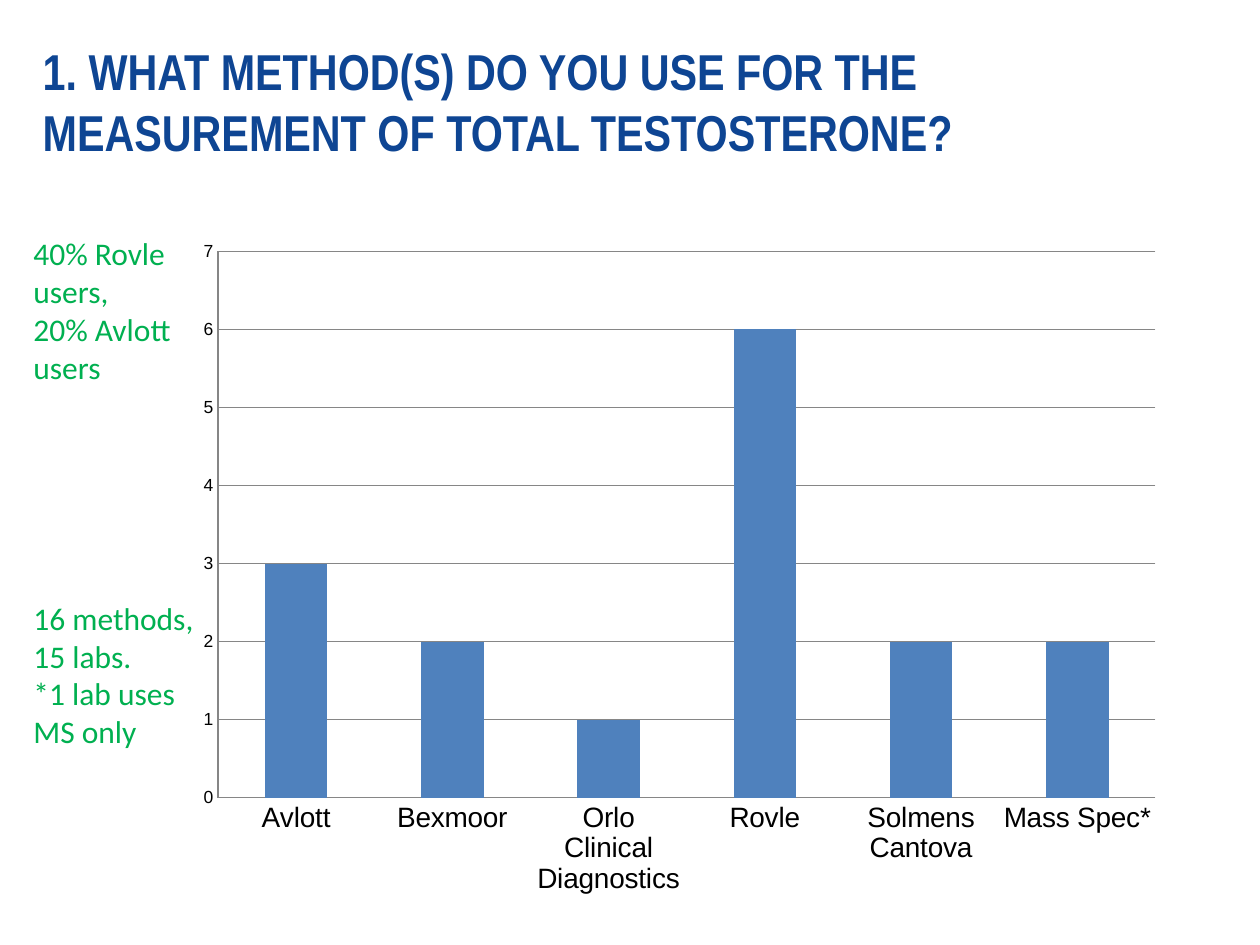
from dataclasses import dataclass

from pptx import Presentation
from pptx.chart.data import CategoryChartData
from pptx.dml.color import RGBColor
from pptx.enum.chart import XL_CHART_TYPE as ChartType, XL_TICK_MARK as TickMark
from pptx.enum.text import MSO_ANCHOR as Anchor
from pptx.slide import Slide
from pptx.util import Pt

NAVY = RGBColor(0x0E, 0x45, 0x93)
GREEN = RGBColor(0x00, 0xB0, 0x50)
BLUE = RGBColor(0x4F, 0x81, 0xBD)
GRAY = RGBColor(0x86, 0x86, 0x86)
BLACK = RGBColor(0x00, 0x00, 0x00)


@dataclass(frozen=True)
class Box:
    left: float
    top: float
    width: float
    height: float

    def lengths(self) -> tuple:
        return Pt(self.left), Pt(self.top), Pt(self.width), Pt(self.height)


@dataclass(frozen=True)
class Line:
    text: str
    size: float
    before: float = 0


TITLE = Line("1. WHAT METHOD(S) DO YOU USE FOR THE MEASUREMENT OF TOTAL TESTOSTERONE?", 28.8)
NOTES = [
    Line("40% Rovle users,", 18),
    Line("20% Avlott users", 18),
    Line("16 methods, 15 labs.", 18, before=122),
    Line("*1 lab uses MS only", 18),
]
METHOD_COUNTS = {
    "Avlott": 3,
    "Bexmoor": 2,
    "Orlo Clinical Diagnostics": 1,
    "Rovle": 6,
    "Solmens Cantova": 2,
    "Mass Spec*": 2,
}


def add_text(slide: Slide, box: Box, lines: list[Line], *, font: str, color: RGBColor,
             bold: bool = False, anchor: Anchor = Anchor.TOP) -> None:
    frame = slide.shapes.add_textbox(*box.lengths()).text_frame
    frame.word_wrap = True
    frame.vertical_anchor = anchor
    for index, line in enumerate(lines):
        paragraph = frame.add_paragraph() if index else frame.paragraphs[0]
        if line.before:
            paragraph.space_before = Pt(line.before)
        run = paragraph.add_run()
        run.text = line.text
        run.font.name = font
        run.font.size = Pt(line.size)
        run.font.bold = bold
        run.font.color.rgb = color


def style_axis(axis, size: float) -> None:
    axis.major_tick_mark = TickMark.NONE
    axis.minor_tick_mark = TickMark.NONE
    axis.format.line.color.rgb = GRAY
    axis.format.line.width = Pt(0.75)
    axis.tick_labels.font.size = Pt(size)


def add_method_chart(slide: Slide, box: Box, counts: dict[str, int]) -> None:
    data = CategoryChartData()
    data.categories = list(counts)
    data.add_series("Series 1", list(counts.values()))
    chart = slide.shapes.add_chart(ChartType.COLUMN_STACKED, *box.lengths(), data).chart
    chart.has_legend = False
    chart.has_title = False
    chart.font.name = "Arial"
    chart.font.size = Pt(10)
    chart.font.color.rgb = BLACK

    plot = chart.plots[0]
    plot.gap_width = 150
    plot.overlap = 100
    plot.vary_by_categories = False
    fill = plot.series[0].format.fill
    fill.solid()
    fill.fore_color.rgb = BLUE

    style_axis(chart.category_axis, 16)
    value_axis = chart.value_axis
    style_axis(value_axis, 10)
    value_axis.minimum_scale = 0
    value_axis.maximum_scale = 7
    value_axis.major_unit = 1
    value_axis.has_major_gridlines = True
    value_axis.major_gridlines.format.line.color.rgb = GRAY
    value_axis.major_gridlines.format.line.width = Pt(0.75)


def main() -> None:
    """Build the slide on testosterone measurement methods."""
    presentation = Presentation()
    presentation.slide_width, presentation.slide_height = Pt(720), Pt(540)
    slide = presentation.slides.add_slide(presentation.slide_layouts[6])
    add_text(slide, Box(17.3, 26, 678, 63.4), [TITLE], font="Arial Narrow", color=NAVY,
             bold=True, anchor=Anchor.MIDDLE)
    add_method_chart(slide, Box(105, 130.3, 566.6, 388), METHOD_COUNTS)
    add_text(slide, Box(12, 130.3, 110, 307.4), NOTES, font="Calibri", color=GREEN)
    presentation.save("out.pptx")


if __name__ == "__main__":
    main()
